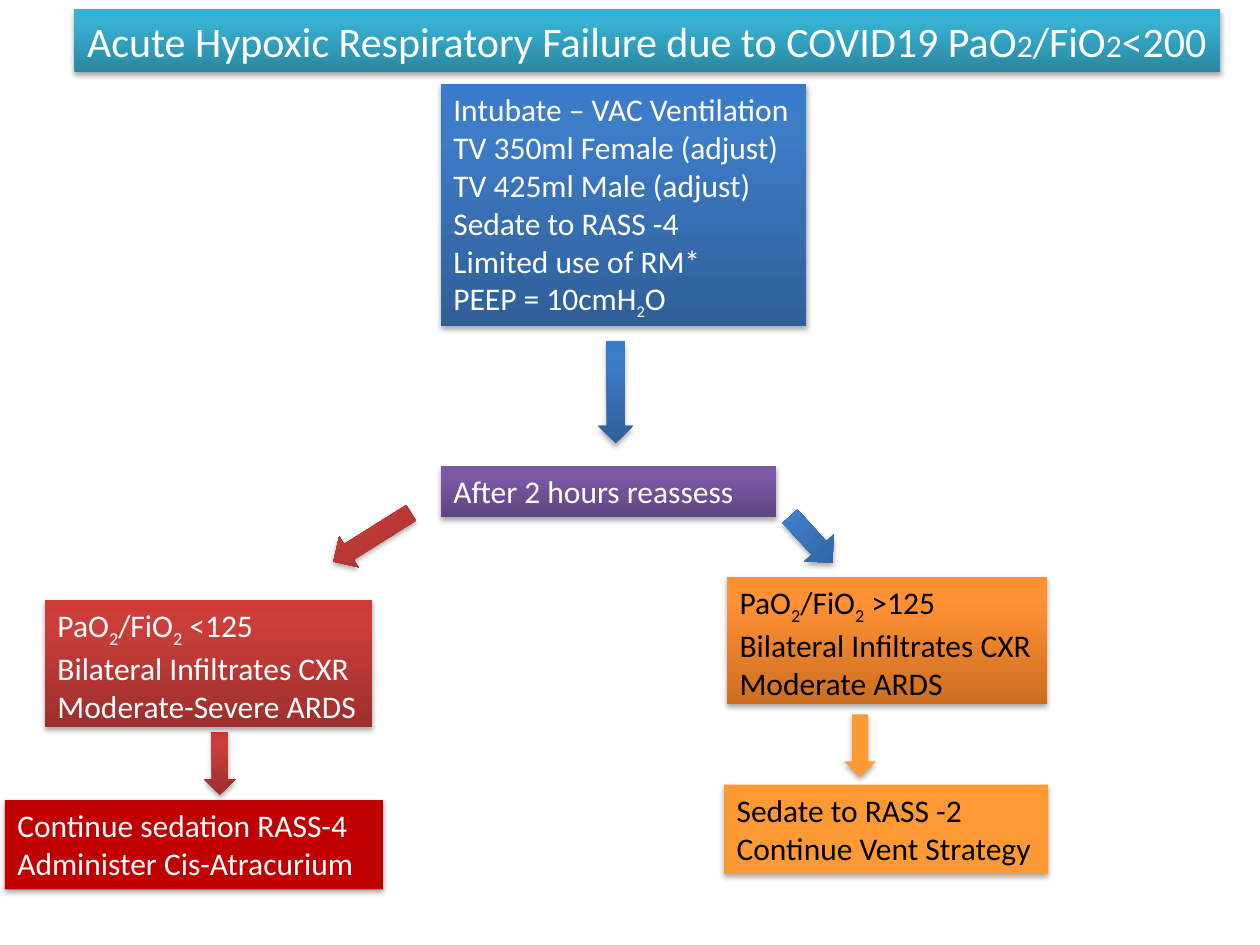
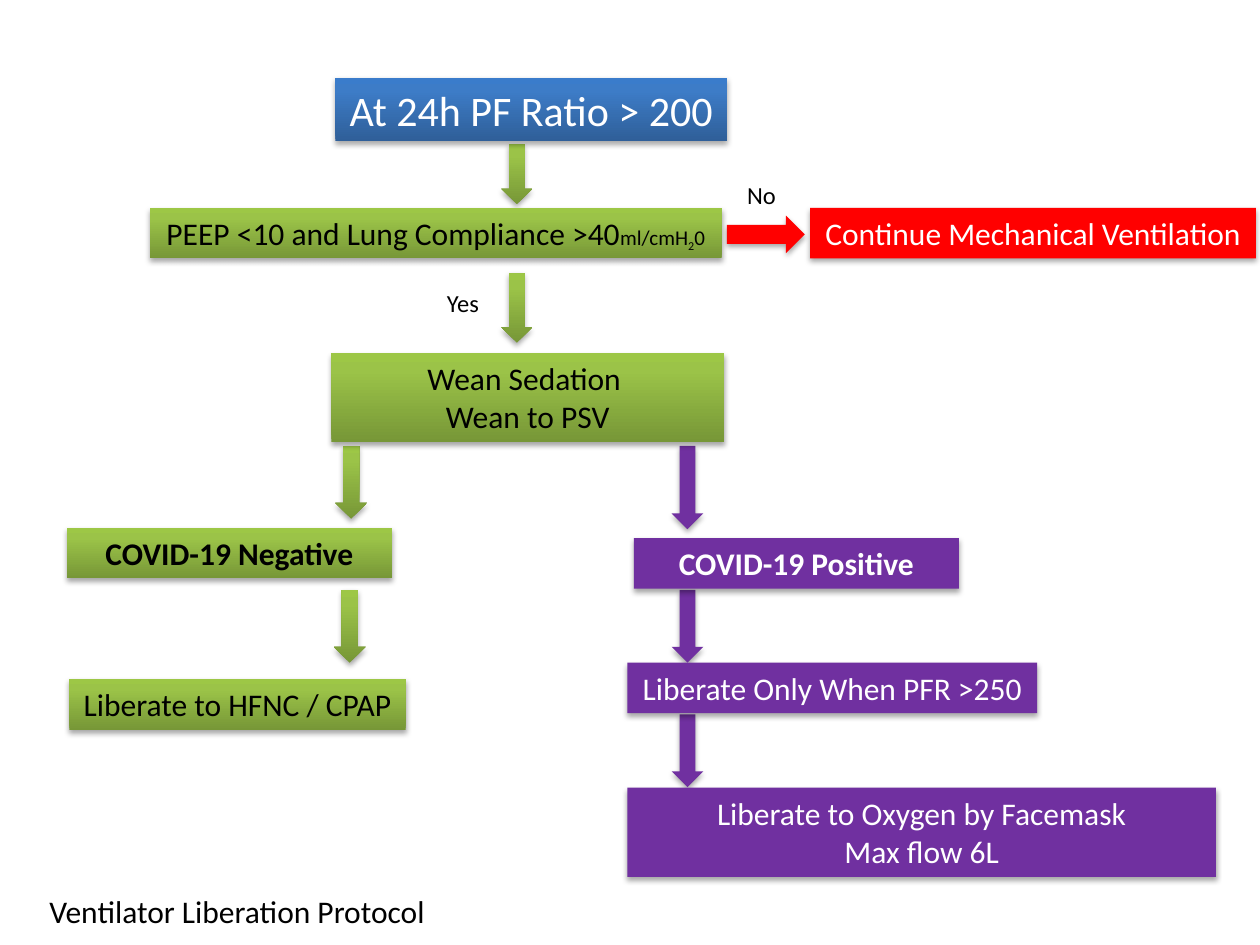
"""Build two flow charts: respiratory failure care and ventilator liberation."""
from copy import deepcopy

from lxml.etree import SubElement
from pptx import Presentation
from pptx.dml.color import RGBColor
from pptx.enum.shapes import MSO_SHAPE
from pptx.enum.text import MSO_ANCHOR, MSO_AUTO_SIZE, PP_ALIGN
from pptx.oxml.ns import qn
from pptx.util import Cm, Pt

FONT = "Calibri"
WHITE = RGBColor(0xFF, 0xFF, 0xFF)
BLACK = RGBColor(0, 0, 0)
TEAL = (RGBColor(0x2A, 0x88, 0xA2), RGBColor(0x37, 0xB1, 0xD2), RGBColor(0x34, 0xB4, 0xD6))
BLUE = (RGBColor(0x2F, 0x5F, 0x99), RGBColor(0x3D, 0x7C, 0xC7), RGBColor(0x3A, 0x7C, 0xCB))
ORANGE = (RGBColor(0xCC, 0x6E, 0x20), RGBColor(0xFF, 0x90, 0x34), RGBColor(0xFF, 0x91, 0x36))
RED = (RGBColor(0x9C, 0x2F, 0x2D), RGBColor(0xCB, 0x3E, 0x3A), RGBColor(0xCE, 0x3B, 0x37))
VIOLET = (RGBColor(0x5F, 0x44, 0x80), RGBColor(0x7B, 0x58, 0xA6), RGBColor(0x7C, 0x57, 0xA8))
GREEN = (RGBColor(0x77, 0x97, 0x37), RGBColor(0x9B, 0xC3, 0x48), RGBColor(0x9D, 0xC7, 0x46))
DARK_RED = RGBColor(0xC0, 0, 0)
BRIGHT_RED = RGBColor(0xFF, 0, 0)
AMBER = RGBColor(0xFF, 0x99, 0x33)
PURPLE = RGBColor(0x70, 0x30, 0xA0)
GRADIENT_POSITIONS = (0, 0.8, 1)
DOWN, LEFT = MSO_SHAPE.DOWN_ARROW, MSO_SHAPE.LEFT_ARROW
SUBSCRIPT = "-25000"


def paint(shape, colour):
    """Fill with one colour or an upward gradient, and add the soft shadow."""
    properties = shape._element.spPr
    if isinstance(colour, RGBColor):
        shape.fill.solid()
        shape.fill.fore_color.rgb = colour
    else:
        shape.fill.gradient()
        shape.fill.gradient_angle = 90
        stop_list = properties.find(".//" + qn("a:gsLst"))
        stop_list.append(deepcopy(stop_list[-1]))
        for stop, position, stop_colour in zip(shape.fill.gradient_stops, GRADIENT_POSITIONS, colour):
            stop.position = position
            stop.color.rgb = stop_colour
    shape.line.fill.background()
    shape.shadow.inherit = False
    shadow = SubElement(properties.find(qn("a:effectLst")), qn("a:outerShdw"),
                        blurRad="40000", dist="23000", dir="5400000", rotWithShape="0")
    shadow_colour = SubElement(shadow, qn("a:srgbClr"), val="000000")
    SubElement(shadow_colour, qn("a:alpha"), val="35000")


def write(shape, paragraphs, colour, size=18, centred=False, bold=False):
    """Write paragraphs of runs; a run is text or (text, size, baseline)."""
    frame = shape.text_frame
    frame.auto_size = MSO_AUTO_SIZE.NONE
    frame.word_wrap = not centred
    frame.vertical_anchor = MSO_ANCHOR.TOP
    if not centred:
        frame.margin_right = 0
    for number, runs in enumerate(paragraphs):
        paragraph = frame.add_paragraph() if number else frame.paragraphs[0]
        paragraph.alignment = PP_ALIGN.CENTER if centred else PP_ALIGN.LEFT
        for item in runs:
            text, run_size, baseline = (item, size, None) if isinstance(item, str) else item
            run = paragraph.add_run()
            run.text = text
            run.font.name = FONT
            run.font.size = Pt(run_size)
            run.font.bold = bold
            run.font.color.rgb = colour
            if baseline:
                run.font._element.set("baseline", baseline)


presentation = Presentation()
presentation.slide_width, presentation.slide_height = Cm(25.4), Cm(19.05)

small_two = ("2", 18, None)
sub_two = ("2", 18, SUBSCRIPT)
failure = {
    "title": ((1.5, 0.18, 23.09, 1.27), TEAL, WHITE, 24,
              ["Acute Hypoxic Respiratory Failure due to COVID19 PaO", small_two,
               "/FiO", small_two, "<200"]),
    "arrows": [
        (DOWN, (12.06, 6.88, 0.71, 2.06), 0, BLUE),
        (DOWN, (15.95, 10.24, 0.81, 1.27), 317.6, BLUE),
        (LEFT, (6.58, 10.46, 1.85, 0.74), 327.9, RED),
        (DOWN, (4.11, 14.76, 0.64, 1.27), 0, RED),
        (DOWN, (17.02, 14.4, 0.64, 1.27), 0, AMBER),
    ],
    "centred": False,
    "boxes": [
        ((8.89, 1.7, 7.37, 4.88), BLUE, WHITE, 18, False,
         [["Intubate – VAC Ventilation"], ["TV 350ml Female (adjust)"],
          ["TV 425ml Male (adjust)"], ["Sedate to RASS -4"], ["Limited use of RM*"],
          ["PEEP = 10cmH", ("2", 16, SUBSCRIPT), "O"]]),
        ((8.89, 9.4, 6.76, 1.02), VIOLET, WHITE, 18, False, [["After 2 hours reassess"]]),
        ((14.66, 11.63, 6.45, 2.57), ORANGE, BLACK, 18, False,
         [["PaO", sub_two, "/FiO", sub_two, " >125"],
          ["Bilateral Infiltrates CXR"], ["Moderate ARDS"]]),
        ((0.91, 12.09, 6.6, 2.57), RED, WHITE, 18, False,
         [["PaO", sub_two, "/FiO", sub_two, " <125"],
          ["Bilateral Infiltrates CXR"], ["Moderate-Severe ARDS"]]),
        ((0.1, 16.13, 7.62, 1.8), DARK_RED, WHITE, 18, False,
         [["Continue sedation RASS-4"], ["Administer Cis-Atracurium"]]),
        ((14.6, 15.82, 6.53, 1.8), AMBER, BLACK, 18, False,
         [["Sedate to RASS -2"], ["Continue Vent Strategy"]]),
    ],
    "labels": [],
}
liberation = {
    "title": ((0.74, 17.86, 8.71, 1.02), None, BLACK, 18, ["Ventilator Liberation Protocol"]),
    "arrows": [
        (DOWN, (10.11, 2.9, 0.62, 1.22), 0, GREEN),
        (DOWN, (10.11, 5.51, 0.62, 1.4), 0, GREEN),
        (DOWN, (6.76, 8.99, 0.64, 1.47), 0, GREEN),
        (DOWN, (6.73, 11.89, 0.64, 1.47), 0, GREEN),
        (DOWN, (13.54, 8.99, 0.64, 1.68), 0, PURPLE),
        (DOWN, (13.54, 11.89, 0.64, 1.47), 0, PURPLE),
        (DOWN, (13.54, 14.4, 0.64, 1.47), 0, PURPLE),
        (DOWN, (15.06, 3.94, 0.76, 1.57), 270, BRIGHT_RED),
    ],
    "centred": True,
    "boxes": [
        ((6.76, 1.57, 7.9, 1.27), BLUE, WHITE, 24, False, [["At 24h PF Ratio > 200"]]),
        ((3.02, 4.19, 11.53, 1.02), GREEN, BLACK, 18, False,
         [["PEEP <10 and Lung Compliance >40", ("ml/cmH", 12, None),
           ("2", 12, SUBSCRIPT), ("0", 12, None)]]),
        ((16.33, 4.19, 8.99, 1.02), BRIGHT_RED, WHITE, 18, False,
         [["Continue Mechanical Ventilation"]]),
        ((6.68, 7.11, 7.92, 1.8), GREEN, BLACK, 18, False, [["Wean Sedation "], ["Wean to PSV"]]),
        ((1.35, 10.64, 6.55, 1.02), GREEN, BLACK, 18, True, [["COVID-19 Negative"]]),
        ((1.4, 13.69, 6.78, 1.02), GREEN, BLACK, 18, False, [["Liberate to HFNC / CPAP"]]),
        ((12.78, 10.85, 6.55, 1.02), PURPLE, WHITE, 18, True, [["COVID-19 Positive"]]),
        ((12.65, 13.36, 8.26, 1.02), PURPLE, WHITE, 18, False, [["Liberate Only When PFR >250"]]),
        ((12.65, 15.88, 11.86, 1.8), PURPLE, WHITE, 18, False,
         [["Liberate to Oxygen by Facemask"], ["Max flow 6L"]]),
    ],
    "labels": [((14.81, 3.51, 1.14, 0.86), "No"), ((8.76, 5.69, 1.32, 0.86), "Yes")],
}

for chart in (failure, liberation):
    slide = presentation.slides.add_slide(presentation.slide_layouts[5])
    place, fill, ink, size, runs = chart["title"]
    title = slide.shapes.title
    title.left, title.top, title.width, title.height = map(Cm, place)
    if fill:
        paint(title, fill)
    write(title, [runs], ink, size)
    for kind, place, rotation, fill in chart["arrows"]:
        arrow = slide.shapes.add_shape(kind, *map(Cm, place))
        arrow.rotation = rotation
        paint(arrow, fill)
    for place, fill, ink, size, bold, paragraphs in chart["boxes"]:
        box = slide.shapes.add_shape(MSO_SHAPE.RECTANGLE, *map(Cm, place))
        paint(box, fill)
        write(box, paragraphs, ink, size, chart["centred"], bold)
    for place, text in chart["labels"]:
        label = slide.shapes.add_textbox(*map(Cm, place))
        write(label, [[text]], BLACK, 14)

presentation.save("out.pptx")
